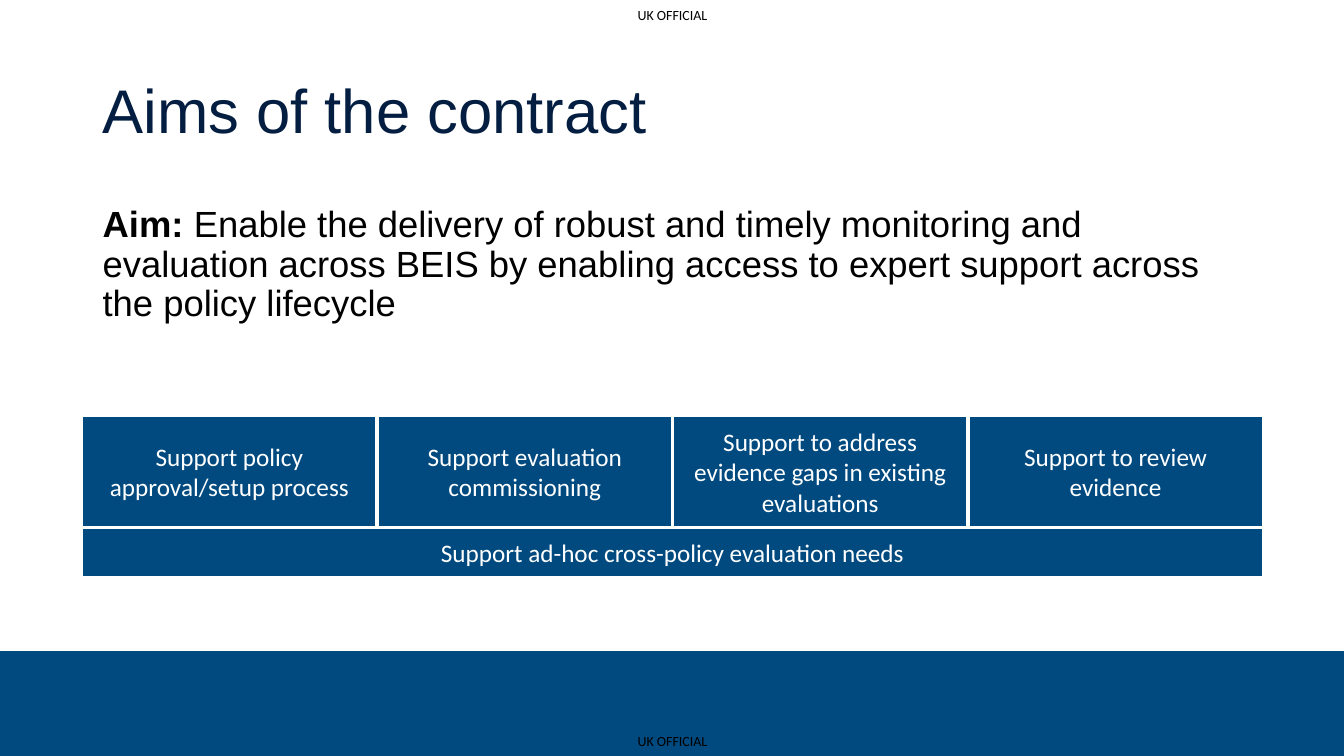
from pptx import Presentation
from pptx.dml.color import RGBColor
from pptx.enum.shapes import MSO_SHAPE
from pptx.enum.text import MSO_ANCHOR, PP_ALIGN
from pptx.util import Inches, Pt

RECTANGLE = MSO_SHAPE.RECTANGLE
TOP, MIDDLE = MSO_ANCHOR.TOP, MSO_ANCHOR.MIDDLE
LEFT, CENTER = PP_ALIGN.LEFT, PP_ALIGN.CENTER

BLUE = RGBColor(0x00, 0x4A, 0x7F)
NAVY = RGBColor(0x04, 0x1E, 0x42)
BLACK = RGBColor(0x00, 0x00, 0x00)
WHITE = RGBColor(0xFF, 0xFF, 0xFF)

SLIDE_WIDTH, SLIDE_HEIGHT = 13.33, 7.5
MARKING_HEIGHT = 0.29
BAND_TOP = 6.46
SUPPORT_LEFT, SUPPORT_TOP = 0.82, 4.13
SUPPORT_WIDTH, SUPPORT_HEIGHT = 2.91, 1.1
SUPPORT_STEP = 2.93

SUPPORT_AREAS = [
    "Support policy approval/setup process",
    "Support evaluation commissioning",
    "Support to address evidence gaps in existing evaluations",
    "Support to review evidence",
]


def write(shape, runs, font, size, color, align=LEFT, anchor=MIDDLE,
          spacing=1.0, inset=None):
    """Fill the shape with one paragraph made of (text, bold) runs."""
    frame = shape.text_frame
    frame.word_wrap = True
    frame.vertical_anchor = anchor
    if inset is not None:
        for side in ("left", "top", "right", "bottom"):
            setattr(frame, f"margin_{side}", Inches(inset))
    paragraph = frame.paragraphs[0]
    paragraph.alignment = align
    paragraph.line_spacing = spacing
    for text, bold in runs:
        run = paragraph.add_run()
        run.text = text
        for name, value in {"name": font, "size": Pt(size), "bold": bold}.items():
            setattr(run.font, name, value)
        run.font.color.rgb = color


def add_text(slide, box, runs, font, size, color, **layout):
    text_box = slide.shapes.add_textbox(*map(Inches, box))
    write(text_box, runs, font, size, color, **layout)


def add_blue_box(slide, box):
    blue_box = slide.shapes.add_shape(RECTANGLE, *map(Inches, box))
    blue_box.shadow.inherit = False
    blue_box.fill.solid()
    blue_box.fill.fore_color.rgb = BLUE
    blue_box.line.fill.background()
    return blue_box


def add_support_box(slide, box, label):
    support = add_blue_box(slide, box)
    support.line.color.rgb = WHITE
    support.line.width = Pt(1)
    write(support, [(label, False)], "Calibri", 18, WHITE, align=CENTER)


def add_marking(slide, top):
    add_text(slide, (6.17, top, 1, MARKING_HEIGHT), [("UK OFFICIAL", False)],
             "Calibri", 10, BLACK, align=CENTER, inset=0)


def main():
    prs = Presentation()
    prs.slide_width = Inches(SLIDE_WIDTH)
    prs.slide_height = Inches(SLIDE_HEIGHT)
    slide = prs.slides.add_slide(prs.slide_layouts[6])

    add_blue_box(slide, (0, BAND_TOP, SLIDE_WIDTH, SLIDE_HEIGHT - BAND_TOP))
    for top in (0, SLIDE_HEIGHT - MARKING_HEIGHT):
        add_marking(slide, top)

    add_text(slide, (0.92, 0.4, 11.5, 1.45), [("Aims of the contract", False)],
             "Arial", 44, NAVY, spacing=0.9)
    aim = [
        ("Aim: ", True),
        ("Enable the delivery of robust and timely monitoring and evaluation "
         "across BEIS by enabling access to expert support across the policy "
         "lifecycle", False),
    ]
    add_text(slide, (0.92, 2, 11.5, 4.45), aim, "Arial", 26, BLACK,
             anchor=TOP, spacing=0.9)

    for column, label in enumerate(SUPPORT_AREAS):
        left = SUPPORT_LEFT + column * SUPPORT_STEP
        add_support_box(
            slide, (left, SUPPORT_TOP, SUPPORT_WIDTH, SUPPORT_HEIGHT), label)
    full_width = SUPPORT_STEP * (len(SUPPORT_AREAS) - 1) + SUPPORT_WIDTH
    add_support_box(slide, (SUPPORT_LEFT, 5.24, full_width, 0.48),
                    "Support ad-hoc cross-policy evaluation needs")

    prs.save("out.pptx")


if __name__ == "__main__":
    main()
